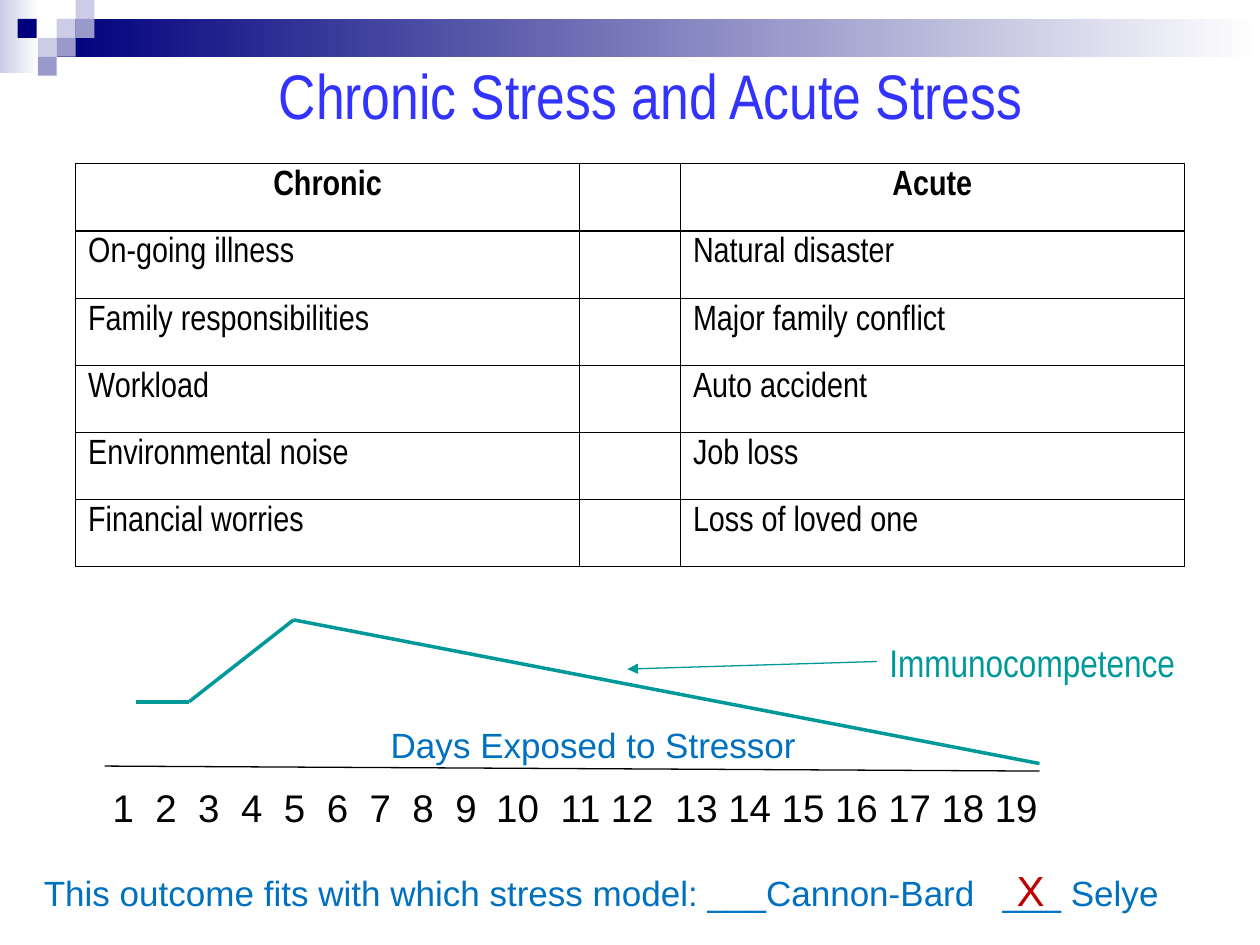
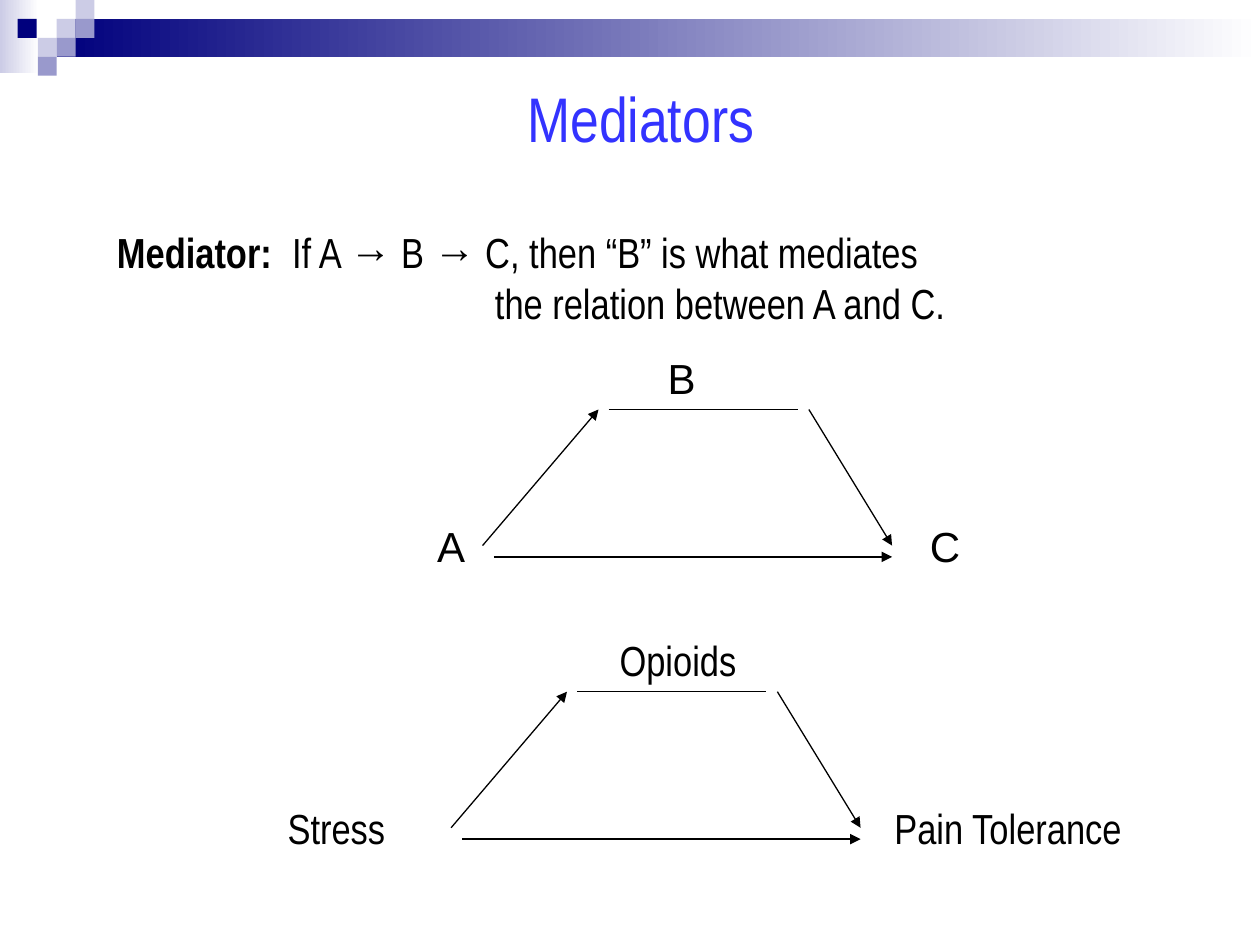
from lxml import etree
from pptx import Presentation
from pptx.dml.color import RGBColor
from pptx.enum import shapes, text
from pptx.oxml import ns
from pptx.util import Inches, Pt

NARROW, SANS = "Arial Narrow", "Arial"
BLACK = RGBColor(0x00, 0x00, 0x00)
WHITE = RGBColor(0xFF, 0xFF, 0xFF)
NAVY = RGBColor(0x00, 0x00, 0x7D)
LAVENDER = RGBColor(0xCC, 0xCC, 0xE6)
PERIWINKLE = RGBColor(0x99, 0x99, 0xCC)
TITLE_BLUE = RGBColor(0x33, 0x33, 0xFF)
BLUE = RGBColor(0x00, 0x70, 0xC0)
TEAL = RGBColor(0x00, 0x99, 0x99)
RED = RGBColor(0xC0, 0x00, 0x00)
CENTER = text.PP_ALIGN.CENTER

BANDS = [((0, 0, 0.31, 0.58), LAVENDER), ((0.45, 0.15, 9.55, 0.3), NAVY)]
SQUARE = 0.15
SQUARES = [
    (0.45, 0.15, LAVENDER), (0.6, 0, LAVENDER), (0.6, 0.15, PERIWINKLE),
    (0.3, 0.3, LAVENDER), (0.14, 0.15, NAVY), (0.45, 0.3, PERIWINKLE),
    (0.3, 0.45, PERIWINKLE),
]

STRESSORS = [
    ("Chronic", "", "Acute"),
    ("On-going illness", "", "Natural disaster"),
    ("Family responsibilities", "", "Major family conflict"),
    ("Workload", "", "Auto accident"),
    ("Environmental noise", "", "Job loss"),
    ("Financial worries", "", "Loss of loved one"),
]
COLUMN_WIDTHS = (4, 0.8, 4)
ROW_HEIGHT = 3.2 / len(STRESSORS)

DAYS = range(1, 20)
DAY_TABS = (
    [0.17 + 0.34 * step for step in range(9)]
    + [3.3, 3.8, 4.21]
    + [4.72 + 0.423 * step for step in range(7)]
)
IMMUNE_CURVE = [(1.08, 5.57), (1.5, 5.57), (2.33, 4.92), (8.25, 6.06)]

DEFINITION = [
    ([("Mediator:", True), ("\tIf A → B → C, then “B” is what mediates", False)], 1.39),
    ([("\tthe relation between A and C.", False)], 3),
]
PATHS = [
    ((1, 0), (2.5, 0), False),
    ((0, 1.08), (0.92, 0), True),
    ((2.59, 0), (3.25, 1.08), True),
    ((0.09, 1.17), (3.25, 1.17), True),
]
DIAGRAMS = [
    ((3.83, 3.25), SANS, [("A", 3.58, 0.67), ("B", 5.41, 0.67), ("C", 7.5, 0.67)]),
    ((3.58, 5.49), NARROW,
     [("Stress", 2.67, 2), ("Opioids", 5.38, 3.42), ("Pain Tolerance", 8, 2.17)]),
]
LABEL_OFFSETS = (0.83, -0.5, 0.83)


def add_run(paragraph, words, size, font, color, bold=False):
    run = paragraph.add_run()
    run.text = words
    run.font.size = Pt(size)
    run.font.name = font
    run.font.bold = bold
    run.font.color.rgb = color


def set_tabs(paragraph, positions, alignment="l"):
    properties = paragraph._p.get_or_add_pPr()
    tab_list = etree.SubElement(properties, ns.qn("a:tabLst"))
    for position in positions:
        etree.SubElement(tab_list, ns.qn("a:tab"), pos=str(int(Inches(position))), algn=alignment)


def add_box(slide, place):
    box = slide.shapes.add_textbox(*map(Inches, place))
    box.text_frame.word_wrap = True
    return box


def add_label(slide, words, place, size, font, color, align=None, tabs=(), tab_align="l"):
    box = add_box(slide, place)
    paragraph = box.text_frame.paragraphs[0]
    if tabs:
        set_tabs(paragraph, tabs, tab_align)
    paragraph.alignment = align
    add_run(paragraph, words, size, font, color)
    return box


def add_line(slide, start, end, color=BLACK, width=0.75, arrow=False):
    line = slide.shapes.add_connector(
        shapes.MSO_CONNECTOR.STRAIGHT, *map(Inches, (*start, *end)))
    line.line.color.rgb = color
    line.line.width = Pt(width)
    if arrow:
        etree.SubElement(line.line._get_or_add_ln(), ns.qn("a:tailEnd"), type="triangle")
    etree.SubElement(line._element.spPr, ns.qn("a:effectLst"))


def add_rectangle(group, place):
    rectangle = group.shapes.add_shape(shapes.MSO_SHAPE.RECTANGLE, *map(Inches, place))
    rectangle.shadow.inherit = False
    rectangle.line.fill.background()
    return rectangle


def add_slide(presentation, title, title_place):
    slide = presentation.slides.add_slide(presentation.slide_layouts[6])
    group = slide.shapes.add_group_shape()
    for place, color in BANDS:
        fill = add_rectangle(group, place).fill
        fill.gradient()
        fill.gradient_angle = 0
        for stop, stop_color in zip(fill.gradient_stops, (color, WHITE)):
            stop.color.rgb = stop_color
    for left, top, color in SQUARES:
        fill = add_rectangle(group, (left, top, SQUARE, SQUARE)).fill
        fill.solid()
        fill.fore_color.rgb = color
    add_label(slide, title, title_place, 36, NARROW, TITLE_BLUE, CENTER)
    return slide


def add_borders(cell):
    properties = cell._tc.get_or_add_tcPr()
    for side in ("lnL", "lnR", "lnT", "lnB"):
        border = etree.SubElement(properties, ns.qn(f"a:{side}"), w=str(int(Pt(0.75))))
        solid = etree.SubElement(border, ns.qn("a:solidFill"))
        etree.SubElement(solid, ns.qn("a:srgbClr"), val=str(BLACK))


def add_stressor_table(slide):
    frame = slide.shapes.add_table(
        len(STRESSORS), len(COLUMN_WIDTHS), Inches(0.6), Inches(1.3),
        Inches(sum(COLUMN_WIDTHS)), Inches(ROW_HEIGHT * len(STRESSORS)))
    table = frame.table
    table.first_row = table.horz_banding = False
    for column, width in zip(table.columns, COLUMN_WIDTHS):
        column.width = Inches(width)
    for row_index, row in enumerate(STRESSORS):
        table.rows[row_index].height = Inches(ROW_HEIGHT)
        for column_index, words in enumerate(row):
            cell = table.cell(row_index, column_index)
            add_borders(cell)
            cell.fill.background()
            if words:
                header = row_index == 0
                paragraph = cell.text_frame.paragraphs[0]
                paragraph.alignment = CENTER if header else None
                add_run(paragraph, words, 20, NARROW, BLACK, header)


def build_stress_slide(presentation):
    slide = add_slide(presentation, "Chronic Stress and Acute Stress", (1.83, 0.4, 6.67, 0.7))
    add_stressor_table(slide)
    add_line(slide, (0.83, 6.08), (8.25, 6.12))
    add_label(slide, "".join(f"\t{day}" for day in DAYS), (0.71, 6.17, 7.8, 0.47),
              22, SANS, BLACK, tabs=DAY_TABS, tab_align="ctr")
    add_label(slide, "Days Exposed to Stressor", (2.71, 5.69, 4, 0.44), 20, SANS, BLUE, CENTER)
    for start, end in zip(IMMUNE_CURVE, IMMUNE_CURVE[1:]):
        add_line(slide, start, end, TEAL, 2)
    label = add_label(slide, "Immunocompetence", (6.96, 5.02, 2.92, 0.47), 22, NARROW, TEAL)
    label.fill.solid()
    label.fill.fore_color.rgb = WHITE
    add_line(slide, (6.96, 5.25), (4.98, 5.31), TEAL, arrow=True)
    add_label(slide, "This outcome fits with which stress model: ___Cannon-Bard\t___ Selye",
              (0.25, 6.87, 9.5, 0.44), 20, SANS, BLUE, tabs=[7.61])
    add_label(slide, "X", (7.93, 6.81, 0.5, 0.5), 24, SANS, RED, CENTER)


def build_mediator_slide(presentation):
    slide = add_slide(presentation, "Mediators", (1.92, 0.58, 6.33, 0.7))
    frame = add_box(slide, (0.83, 1.75, 8.67, 0.9)).text_frame
    for index, (runs, tab) in enumerate(DEFINITION):
        paragraph = frame.add_paragraph() if index else frame.paragraphs[0]
        set_tabs(paragraph, [tab])
        for words, bold in runs:
            add_run(paragraph, words, 24, NARROW, BLACK, bold)
    for (left, top), font, labels in DIAGRAMS:
        for start, end, arrow in PATHS:
            add_line(slide, (left + start[0], top + start[1]),
                     (left + end[0], top + end[1]), arrow=arrow)
        for (words, center, width), offset in zip(labels, LABEL_OFFSETS):
            add_label(slide, words, (center - width / 2, top + offset, width, 0.5),
                      24, font, BLACK, CENTER)


def main():
    presentation = Presentation()
    presentation.slide_width = Inches(10)
    presentation.slide_height = Inches(7.5)
    build_stress_slide(presentation)
    build_mediator_slide(presentation)
    presentation.save("out.pptx")


if __name__ == "__main__":
    main()
